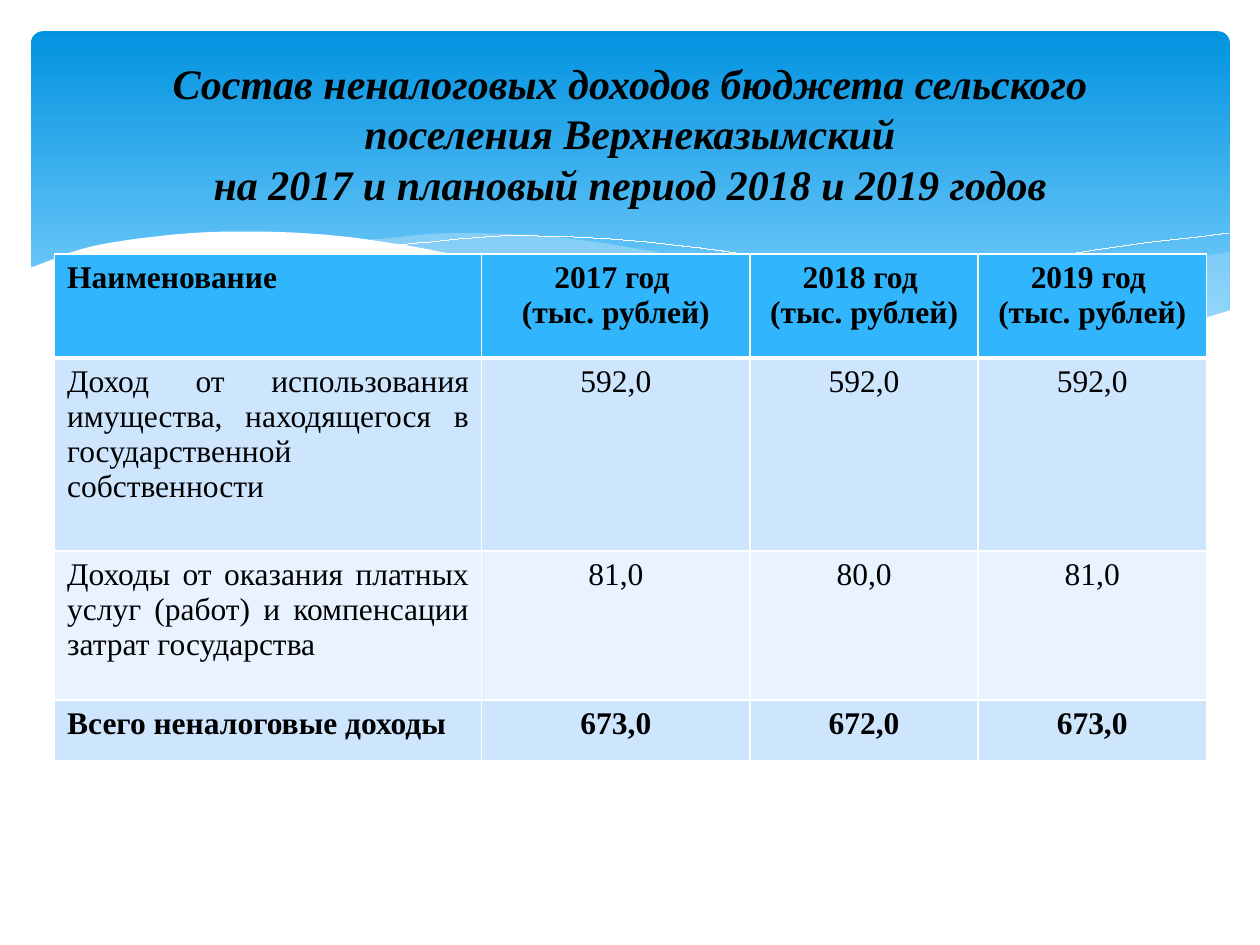
from pptx import Presentation
from pptx.dml.color import RGBColor
from pptx.enum.shapes import MSO_SHAPE
from pptx.enum.text import MSO_ANCHOR, PP_ALIGN
from pptx.oxml.ns import qn
from pptx.util import Cm, Pt
from lxml import etree

CENTER, JUSTIFY, LEFT = PP_ALIGN.CENTER, PP_ALIGN.JUSTIFY, PP_ALIGN.LEFT
MIDDLE = MSO_ANCHOR.MIDDLE
ROUNDED = MSO_SHAPE.ROUNDED_RECTANGLE

FONT = "Times New Roman"
COLORS = {
    "text": "000000", "white": "FFFFFF", "sky_top": "0293E0",
    "sky_bottom": "83D3FE", "wave": "C6E7FC", "header": "31B6FD",
    "band_dark": "CEE5FE", "band_light": "E8F3FF",
}

TITLE = ("Состав неналоговых доходов бюджета сельского поселения Верхнеказымский"
         "\vна 2017 и плановый период 2018 и 2019 годов")
HEADER = ["Наименование"] + [f"{year} год \n(тыс. рублей)" for year in (2017, 2018, 2019)]
ROWS = [  # texts, fill, height in cm, bold
    (HEADER, "header", 2.1, True),
    (["Доход от использования имущества, находящегося в государственной собственности",
      "592,0", "592,0", "592,0"], "band_dark", 3.89, False),
    (["Доходы от оказания платных услуг (работ) и компенсации затрат государства",
      "81,0", "80,0", "81,0"], "band_light", 3.0, False),
    (["Всего неналоговые доходы", "673,0", "672,0", "673,0"], "band_dark", 1.22, True),
]
COLUMN_WIDTHS = [8.61, 5.41, 4.6, 4.6]
THIN, THICK = 1, 3  # table borders in points

# Each wave has an upper edge and, if filled, a lower edge. An edge is a few
# knots (x, y) in cm, from left to right, joined by a smooth curve.
WAVES = [
    {"fill": "wave", "opacity": 29,
     "upper": [(16.79, 6.73), (19.79, 6.15), (23, 5.41), (24.79, 5.08)],
     "lower": [(16.79, 6.73), (18.92, 6.99), (20.68, 7.06), (22.78, 6.86), (24.79, 6.27)]},
    {"fill": "wave", "opacity": 40,
     "upper": [(7.26, 4.85), (9.17, 4.7), (11.81, 4.85), (15.98, 5.64),
               (19.69, 6.45), (22.68, 6.93)],
     "lower": [(7.26, 4.85), (11.4, 5.64), (15.7, 6.55), (18.34, 6.96),
               (20.5, 7.06), (22.68, 6.93)]},
    {"upper": [(7.85, 4.95), (10.57, 4.75), (14.12, 5), (18.47, 5.74), (23.04, 6.91)]},
    {"upper": [(15.57, 6.53), (19, 5.66), (22, 5.05), (24.77, 4.7)]},
    {"fill": "white", "opacity": 100,
     "upper": [(0.58, 5.41), (1.93, 4.95), (4.5, 4.67), (7.42, 4.83), (11.35, 5.59),
               (15.32, 6.45), (18.44, 6.91), (20.9, 7.04), (22.83, 6.83), (24.82, 6.25)],
     "lower": [(0.58, 8.36), (24.82, 8.36)]},
]
UNITS_PER_CM = 100
STEPS_PER_SPAN = 10


def rgb(name):
    return RGBColor.from_string(COLORS[name])


def style(para, size, bold, italic=False):
    font = para.font
    font.name, font.size, font.bold, font.italic = FONT, Pt(size), bold, italic
    font.color.rgb = rgb("text")


def smooth_edge(knots):
    """Join the knots by cubic Hermite spans; each slope comes from the neighbours."""
    slopes = []
    for i in range(len(knots)):
        (x0, y0), (x1, y1) = knots[max(i - 1, 0)], knots[min(i + 1, len(knots) - 1)]
        slopes.append((y1 - y0) / (x1 - x0))
    points = [knots[0]]
    for i, ((x0, y0), (x1, y1)) in enumerate(zip(knots, knots[1:])):
        width = x1 - x0
        for step in range(1, STEPS_PER_SPAN + 1):
            t = step / STEPS_PER_SPAN
            ease = t * t * (3 - 2 * t)
            bend = t * (1 - t) * (slopes[i] * (1 - t) - slopes[i + 1] * t)
            points.append((x0 + width * t, y0 + (y1 - y0) * ease + width * bend))
    return points


def add_sky(slide):
    sky = slide.shapes.add_shape(ROUNDED, Cm(0.63), Cm(0.63), Cm(24.16), Cm(6.86))
    sky.adjustments[0] = 0.034
    sky.shadow.inherit = False
    sky.line.fill.background()
    sky.fill.gradient()
    sky.fill.gradient_angle = 270
    stops = zip(sky.fill.gradient_stops, ("sky_top", "sky_bottom"), (0, 0.9))
    for stop, color, position in stops:
        stop.color.rgb = rgb(color)
        stop.position = position


def add_wave(slide, upper, lower=None, fill=None, opacity=100):
    """Draw a filled wave between two edges, or a white hairline along one."""
    outline = smooth_edge(upper)
    if lower:
        outline += reversed(smooth_edge(lower))
    start, *rest = [(x * UNITS_PER_CM, y * UNITS_PER_CM) for x, y in outline]
    builder = slide.shapes.build_freeform(*start, scale=Cm(1) / UNITS_PER_CM)
    builder.add_line_segments(rest, close=lower is not None)
    wave = builder.convert_to_shape()
    wave.shadow.inherit = False
    if lower is None:
        wave.fill.background()
        wave.line.color.rgb = rgb("white")
        wave.line.width = Pt(0.01)
        return
    wave.line.fill.background()
    wave.fill.solid()
    wave.fill.fore_color.rgb = rgb(fill)
    if opacity < 100:
        color = wave._element.spPr.find(qn("a:solidFill")).find(qn("a:srgbClr"))
        etree.SubElement(color, qn("a:alpha"), val=str(opacity * 1000))


def add_borders(cell, widths):
    """Draw white borders; widths maps each side (L, R, T, B) to points."""
    properties = cell._tc.get_or_add_tcPr()
    for side, width in widths.items():
        line = etree.SubElement(properties, qn(f"a:ln{side}"), w=str(Pt(width)))
        fill = etree.SubElement(line, qn("a:solidFill"))
        etree.SubElement(fill, qn("a:srgbClr"), val=COLORS["white"])


def add_income_table(slide):
    total_height = sum(height for _, _, height, _ in ROWS)
    table = slide.shapes.add_table(
        len(ROWS), len(HEADER), Cm(1.1), Cm(5.12),
        Cm(sum(COLUMN_WIDTHS)), Cm(total_height)).table
    for column, width in zip(table.columns, COLUMN_WIDTHS):
        column.width = Cm(width)
    for r, (texts, fill, height, bold) in enumerate(ROWS):
        table.rows[r].height = Cm(height)
        borders = {"L": THIN, "R": THIN, "T": THICK if r == 1 else THIN,
                   "B": THICK if r == 0 else THIN}
        label_alignment = LEFT if bold else JUSTIFY
        for c, text in enumerate(texts):
            cell = table.cell(r, c)
            add_borders(cell, borders)
            cell.fill.solid()
            cell.fill.fore_color.rgb = rgb(fill)
            cell.text_frame.text = text
            for para in cell.text_frame.paragraphs:
                para.alignment = label_alignment if c == 0 else CENTER
                style(para, 18, bold)


def add_title(slide):
    box = slide.shapes.add_textbox(Cm(1.27), Cm(0.94), Cm(22.86), Cm(3.48))
    frame = box.text_frame
    frame.word_wrap = True
    frame.vertical_anchor = MIDDLE
    frame.text = TITLE
    para = frame.paragraphs[0]
    para.alignment = CENTER
    style(para, 24, bold=True, italic=True)


def main():
    deck = Presentation()
    deck.slide_width, deck.slide_height = Cm(25.4), Cm(19.05)
    slide = deck.slides.add_slide(deck.slide_layouts[6])
    add_sky(slide)
    for wave in WAVES:
        add_wave(slide, **wave)
    add_income_table(slide)
    add_title(slide)
    deck.save("out.pptx")


if __name__ == "__main__":
    main()
